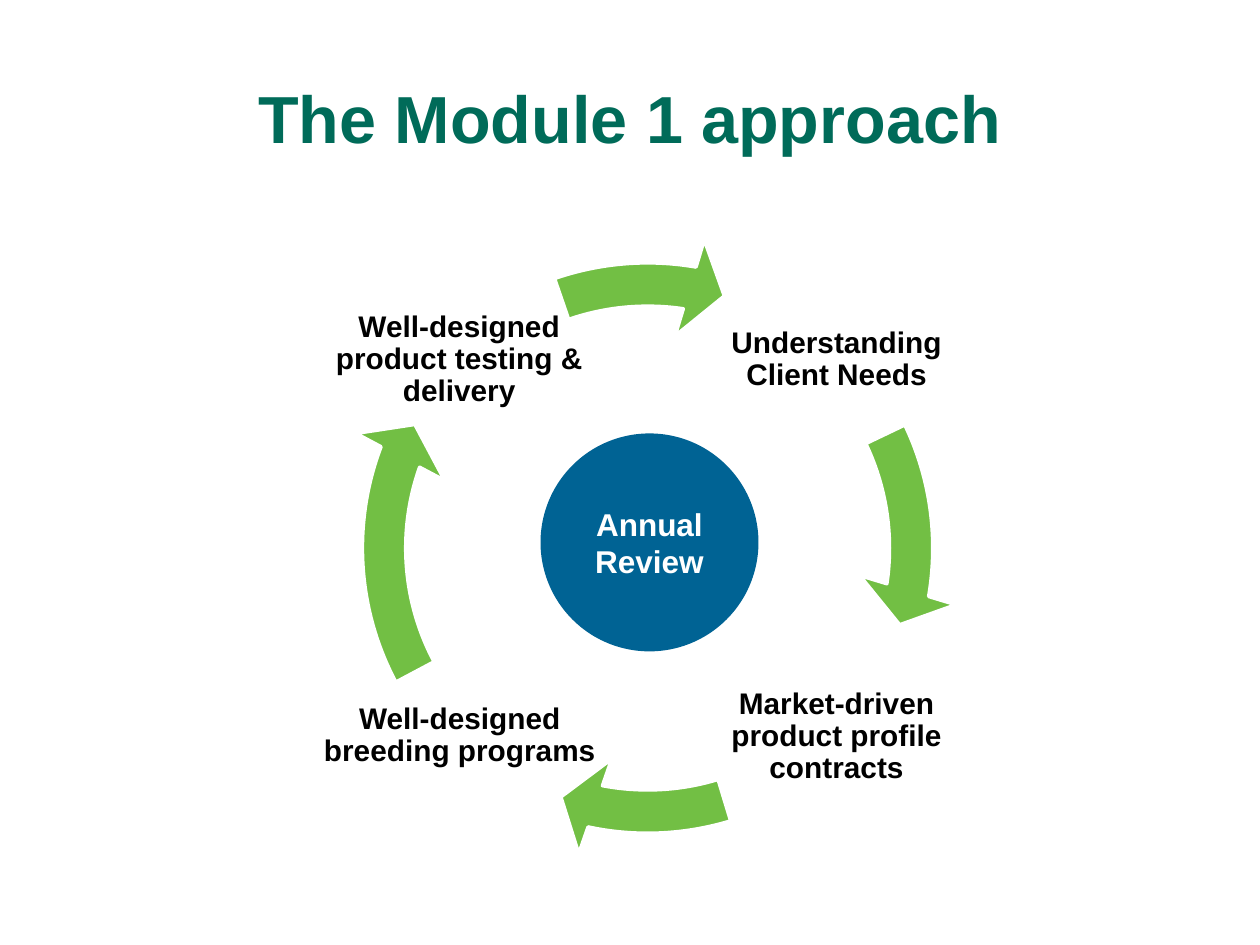
from pptx import Presentation
from pptx.dml.color import RGBColor
from pptx.enum.shapes import MSO_SHAPE
from pptx.enum.text import MSO_ANCHOR, PP_ALIGN
from pptx.util import Inches, Pt

GREEN, BLUE, TEAL = "72BF44", "006394", "006B59"
WHITE, BLACK = "FFFFFF", "000000"

# Cycle steps: text, left, top, width, height
STEPS = [
    ("Understanding Client Needs", 5.76, 2.27, 1.76, 1.17),
    ("Market-driven product profile contracts", 5.76, 4.97, 1.76, 1.76),
    ("Well-designed breeding programs", 2.55, 5.34, 2.2, 1),
    ("Well-designed product testing & delivery", 2.43, 2.35, 2.43, 1.01),
]
# Start and end of each arrow, in degrees clockwise from the right
ARROWS = [(334.42, 9.18), (73.07, 101.46), (151.97, 200.22), (250.95, 279.18)]


def color(value):
    return RGBColor.from_string(value)


def write(sp, text, size, fill=BLACK, inset=0.1, spacing=1.0):
    tf = sp.text_frame
    tf.word_wrap = True
    tf.vertical_anchor = MSO_ANCHOR.MIDDLE
    tf.margin_left = tf.margin_right = Inches(inset)
    tf.margin_top = tf.margin_bottom = Inches(inset if inset < 0.05 else 0.05)
    p = tf.paragraphs[0]
    p.alignment = PP_ALIGN.CENTER
    p.line_spacing = spacing
    r = p.add_run()
    r.text = text
    r.font.name = "Arial"
    r.font.size = Pt(size)
    r.font.bold = True
    r.font.color.rgb = color(fill)


def add_text(s, text, x, y, w, h, **style):
    sp = s.shapes.add_textbox(Inches(x), Inches(y), Inches(w), Inches(h))
    write(sp, text, **style)


def add_shape(s, kind, x, y, size, fill):
    sp = s.shapes.add_shape(kind, Inches(x), Inches(y), Inches(size), Inches(size))
    sp.shadow.inherit = False
    sp.fill.solid()
    sp.fill.fore_color.rgb = color(fill)
    sp.line.fill.background()
    return sp


def add_arrow(s, start, end):
    sp = add_shape(s, MSO_SHAPE.CIRCULAR_ARROW, 2.65, 1.86, 4.98, GREEN)
    sp.line.color.rgb = color(WHITE)
    sp.line.width = Pt(2)
    # Angles are stored in 60000ths of a degree, adjustments in 100000ths
    head, end, start = (angle * 0.6 for angle in (7.75, end, start))
    for i, value in enumerate((0.069, head, end, start, 0.08)):
        sp.adjustments[i] = value


def main():
    prs = Presentation()
    prs.slide_width, prs.slide_height = Inches(10), Inches(7.5)
    s = prs.slides.add_slide(prs.slide_layouts[6])

    # Title
    add_text(s, "The Module 1 approach", 0.5, 0.3, 9, 1.25, size=38, fill=TEAL)

    # Cycle of steps and arrows
    for step, arrow in zip(STEPS, ARROWS):
        add_text(s, *step, size=17, inset=0.02, spacing=0.9)
        add_arrow(s, *arrow)

    # Center
    hub = add_shape(s, MSO_SHAPE.OVAL, 4.29, 3.44, 1.73, BLUE)
    write(hub, "Annual Review", size=18, fill=WHITE)

    prs.save("out.pptx")


if __name__ == "__main__":
    main()
